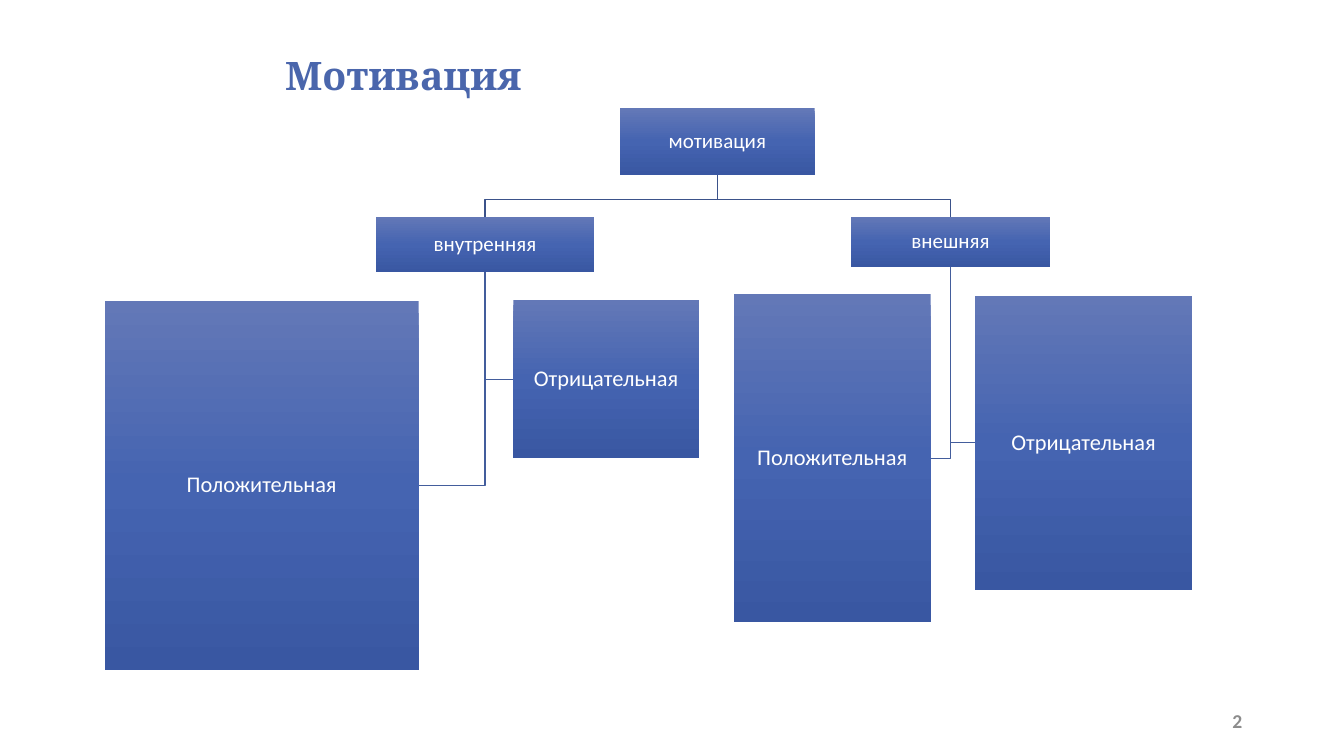
from copy import deepcopy
from pptx import Presentation, util as u
from pptx.dml.color import RGBColor
from pptx.enum import shapes, text
from pptx.oxml.ns import qn

WHITE = RGBColor(0xFF, 0xFF, 0xFF)
TITLE_BLUE = RGBColor(0x4A, 0x66, 0xAC)
UPPER_LINE = RGBColor(0x3B, 0x52, 0x8A)
LOWER_LINE = RGBColor(0x43, 0x5D, 0x9C)
PAGE_GREY = RGBColor(0x8C, 0x8C, 0x8C)
GRADIENT = [(0, RGBColor(0x63, 0x78, 0xB7)),
            (0.5, RGBColor(0x45, 0x64, 0xB1)),
            (1, RGBColor(0x39, 0x57, 0xA2))]

deck = Presentation()
deck.slide_width, deck.slide_height = u.Inches(13.33), u.Inches(7.5)
slide = deck.slides.add_slide(deck.slide_layouts[6])

# Grid of 100 columns by 100 rows
COL, ROW = deck.slide_width / 100, deck.slide_height / 100


def grid(left, top, width, height):
    return [round(v) for v in (left * COL, top * ROW, width * COL, height * ROW)]


def write(frame, words, size, font, color, bold=False, align=None, spacing=None):
    frame.word_wrap = True
    frame.vertical_anchor = text.MSO_ANCHOR.MIDDLE
    line = frame.paragraphs[0]
    line.alignment = align
    line.line_spacing = spacing
    run = line.add_run()
    run.text = words
    run.font.size, run.font.name, run.font.bold = u.Pt(size), font, bold
    run.font.color.rgb = color


# Title
title = slide.shapes.add_textbox(*grid(20.48, 0.8, 78.77, 19.07))
write(title.text_frame, "Мотивация", 28, "Cambria", TITLE_BLUE, bold=True, spacing=0.9)

# Tree: label, text size, left, top, width, height
root = ("мотивация", 15, 46.13, 14.35, 14.48, 8.8)
inner = ("внутренняя", 15, 27.98, 28.67, 16.2, 7.33)
outer = ("внешняя", 15, 63.3, 28.67, 14.85, 6.67)
leaves = {
    inner: [("Положительная", 16, 7.8, 39.8, 23.35, 48.85),
            ("Отрицательная", 16, 38.2, 39.7, 13.8, 20.95)],
    outer: [("Положительная", 16, 54.6, 38.95, 14.65, 43.35),
            ("Отрицательная", 16, 72.53, 39.1, 16.2, 38.95)],
}
FORK = 26.4  # row where the upper branches part

# Branches: lower ones enter a leaf from the side, upper ones from above
branches = []
root_x = root[2] + root[4] / 2
for kind, signs in leaves.items():
    _, _, left, top, width, height = kind
    stem = left + width / 2
    branches.append((UPPER_LINE, [(root_x, root[3] + root[5]), (root_x, FORK),
                                  (stem, FORK), (stem, top)]))
    for _, _, leaf_left, leaf_top, leaf_width, leaf_height in signs:
        middle = leaf_top + leaf_height / 2
        edge = leaf_left if leaf_left > stem else leaf_left + leaf_width
        branches.append((LOWER_LINE, [(stem, top + height), (stem, middle), (edge, middle)]))

for color, points in branches:
    start, *rest = [(round(x * COL), round(y * ROW)) for x, y in points]
    builder = slide.shapes.build_freeform(*start)
    builder.add_line_segments(rest, close=False)
    branch = builder.convert_to_shape()
    branch.shadow.inherit = False
    branch.fill.background()
    branch.line.color.rgb = color
    branch.line.width = u.Pt(1)

# Boxes
for label, size, *place in [root, *leaves, *leaves[inner], *leaves[outer]]:
    box = slide.shapes.add_shape(shapes.MSO_SHAPE.RECTANGLE, *grid(*place))
    box.shadow.inherit = False
    box.line.fill.background()
    box.fill.gradient()
    box.fill.gradient_angle = 270
    stops = box.fill._fill._gradFill.find(qn("a:gsLst"))
    stops.append(deepcopy(stops[0]))
    for stop, (position, color) in zip(box.fill.gradient_stops, GRADIENT):
        stop.position = position
        stop.color.rgb = color
    frame = box.text_frame
    frame.margin_left = frame.margin_right = u.Inches(0.01)
    frame.margin_top = frame.margin_bottom = u.Inches(0.01)
    write(frame, label, size, "Calibri", WHITE, align=text.PP_ALIGN.CENTER, spacing=0.9)

# Page number
page = slide.shapes.add_textbox(*grid(70.67, 92.67, 22.5, 5.33))
write(page.text_frame, "2", 14, "Calibri", PAGE_GREY, bold=True, align=text.PP_ALIGN.RIGHT)

deck.save("out.pptx")
